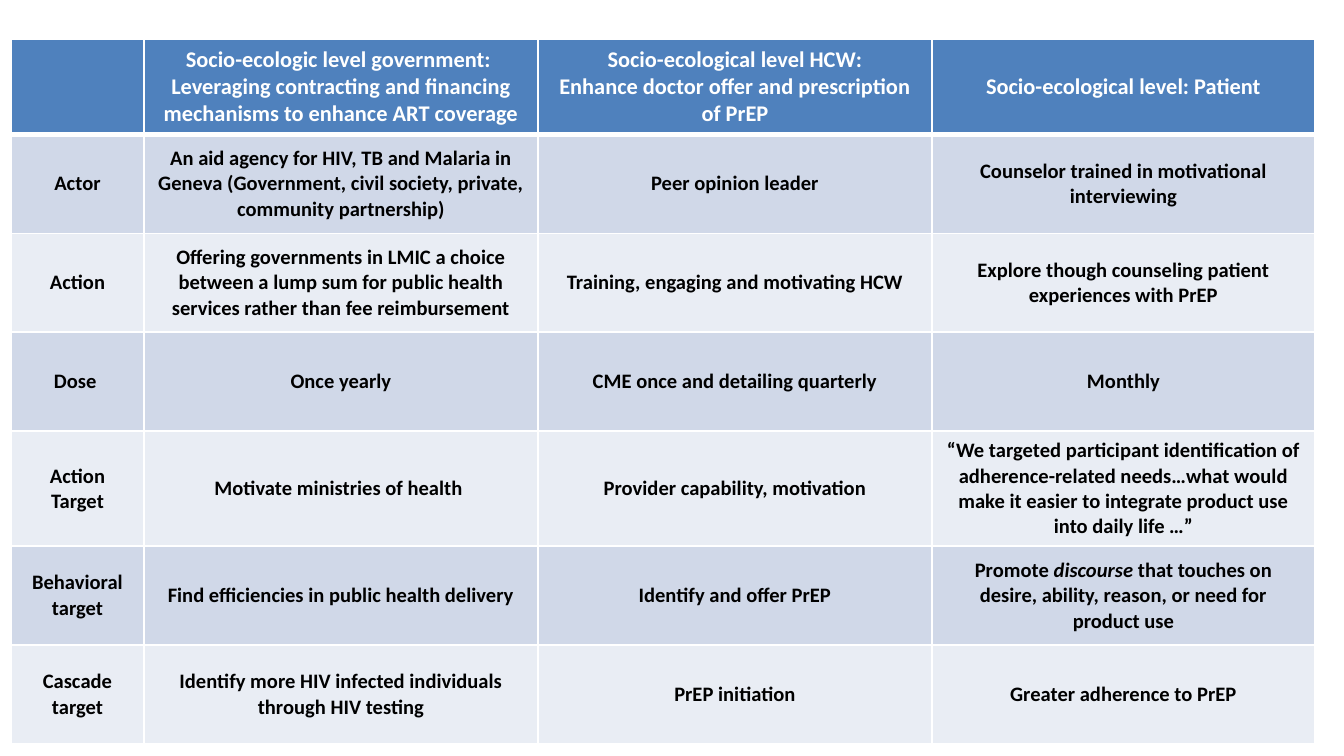
from lxml import etree
from pptx import Presentation
from pptx.dml.color import RGBColor
from pptx.enum.text import MSO_ANCHOR, PP_ALIGN
from pptx.oxml.ns import qn
from pptx.util import Pt

SCALE = 914400 / 134.4  # EMU per px
MIDDLE = MSO_ANCHOR.MIDDLE
CENTER = PP_ALIGN.CENTER

WHITE = RGBColor(0xFF, 0xFF, 0xFF)
BLACK = RGBColor(0x00, 0x00, 0x00)
BLUE = RGBColor(0x4F, 0x81, 0xBD)
BANDS = (RGBColor(0xD0, 0xD8, 0xE8), RGBColor(0xE9, 0xED, 0xF4))

COLS = (133, 394, 394, 383)
ROWS = (94, 99, 99, 99, 112, 99, 99)

# Newlines part paragraphs, asterisks enclose italics
CELLS = (
    ("",
     "Socio-ecologic level government: \n"
     "Leveraging contracting and financing mechanisms to enhance ART coverage",
     "Socio-ecological level HCW:\n"
     "Enhance doctor offer and prescription of PrEP",
     "Socio-ecological level: Patient"),
    ("Actor",
     "An aid agency for HIV, TB and Malaria in Geneva "
     "(Government, civil society, private, community partnership)",
     "Peer opinion leader",
     "Counselor trained in motivational interviewing"),
    ("Action",
     "Offering governments in LMIC a choice between a lump sum for "
     "public health services rather than fee reimbursement",
     "Training, engaging and motivating HCW",
     "Explore though counseling patient experiences with PrEP"),
    ("Dose ",
     "Once yearly",
     "CME once and detailing quarterly",
     "Monthly"),
    ("Action Target",
     "Motivate ministries of health ",
     "Provider capability, motivation",
     "“We targeted participant identification of adherence-related needs…"
     "what would make it easier to integrate product use into daily life …”"),
    ("Behavioral target",
     "Find efficiencies in public health delivery",
     "Identify and offer PrEP",
     "Promote *discourse* that touches on desire, ability, reason, "
     "or need for product use"),
    ("Cascade target",
     "Identify more HIV infected individuals through HIV testing",
     "PrEP initiation",
     "Greater adherence to PrEP"),
)


def px(count):
    return round(count * SCALE)


def set_edges(cell, widths):
    """Draw white cell borders, given in points by side."""
    props = cell._tc.get_or_add_tcPr()
    for index, (side, width) in enumerate(widths.items()):
        line = etree.Element(qn(f"a:ln{side}"), w=str(Pt(width)))
        fill = etree.SubElement(line, qn("a:solidFill"))
        etree.SubElement(fill, qn("a:srgbClr"), val=str(WHITE))
        props.insert(index, line)


def write_text(cell, text, size, color):
    frame = cell.text_frame
    for index, line in enumerate(text.split("\n")):
        para = frame.add_paragraph() if index else frame.paragraphs[0]
        para.alignment = CENTER
        font = para.font
        font.name, font.size, font.bold = "Calibri", Pt(size), True
        font.color.rgb = color
        for part, words in enumerate(line.split("*")):
            if words:
                run = para.add_run()
                run.text = words
                if part % 2:
                    run.font.italic = True


def style_cell(cell, text, row):
    head = row == 0
    cell.vertical_anchor = MIDDLE
    cell.fill.solid()
    cell.fill.fore_color.rgb = BLUE if head else BANDS[(row - 1) % 2]
    set_edges(cell, {"L": 1, "R": 1, "T": 3 if row == 1 else 1,
                     "B": 3 if head else 1})
    write_text(cell, text, 12 if head else 11, WHITE if head else BLACK)


def add_grid(slide, left, top):
    frame = slide.shapes.add_table(len(ROWS), len(COLS), px(left), px(top),
                                   px(sum(COLS)), px(sum(ROWS)))
    table = frame.table
    for col, width in zip(table.columns, COLS):
        col.width = px(width)
    for row, height in zip(table.rows, ROWS):
        row.height = px(height)
    for row, texts in enumerate(CELLS):
        for col, text in enumerate(texts):
            style_cell(table.cell(row, col), text, row)


def main():
    deck = Presentation()
    deck.slide_width, deck.slide_height = px(1344), px(756)
    slide = deck.slides.add_slide(deck.slide_layouts[6])  # blank layout
    add_grid(slide, 11, 39)
    deck.save("out.pptx")


if __name__ == "__main__":
    main()
